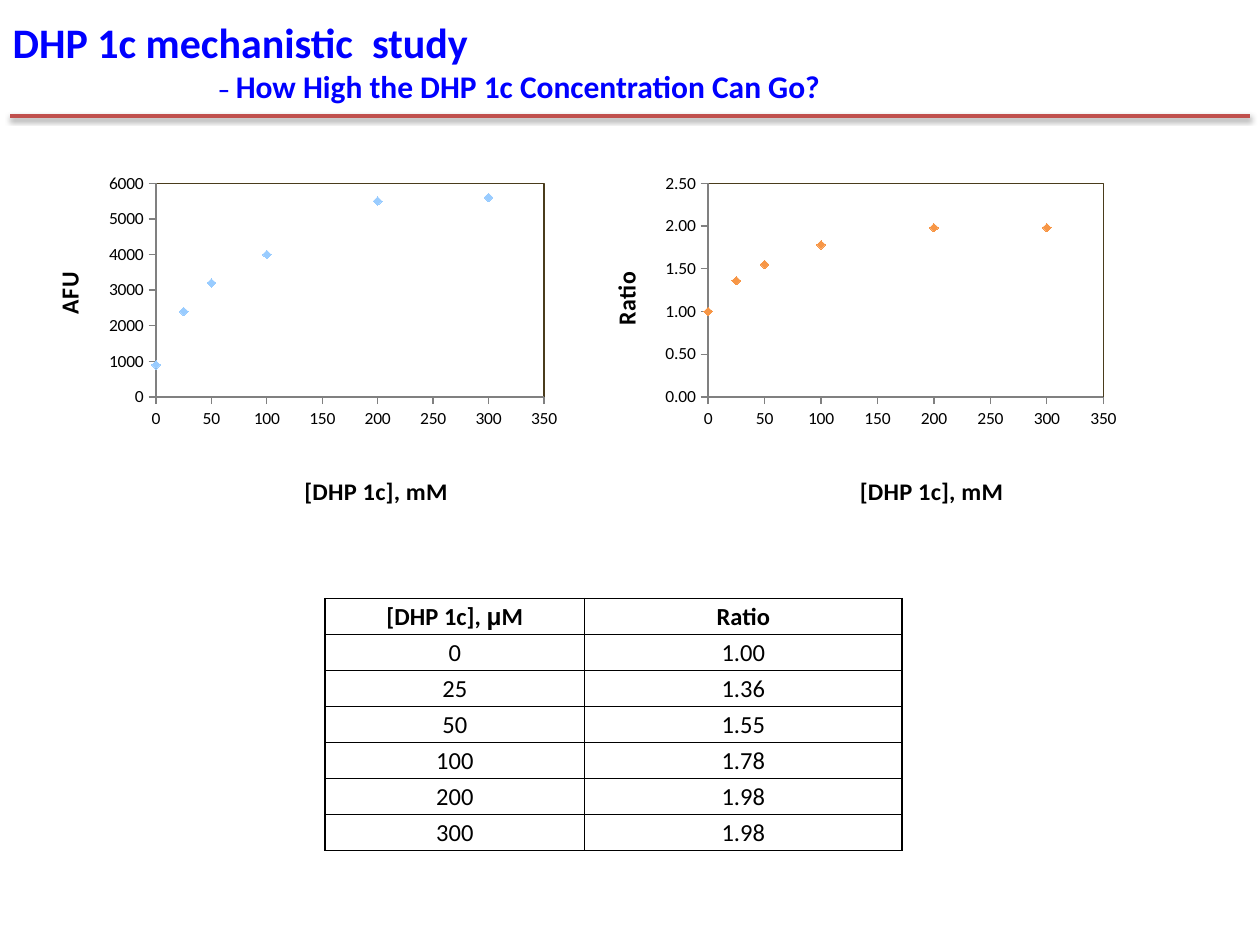
from lxml.etree import SubElement
from pptx import Presentation
from pptx.chart.data import XyChartData
from pptx.dml.color import RGBColor
from pptx.enum.chart import XL_CHART_TYPE, XL_MARKER_STYLE, XL_TICK_MARK
from pptx.enum.shapes import MSO_CONNECTOR
from pptx.enum.text import MSO_ANCHOR, PP_ALIGN
from pptx.oxml import parse_xml
from pptx.oxml.ns import nsdecls, qn
from pptx.util import Inches, Pt

COLORS = {
    "title": "0000FF",
    "rule": "C0504D",
    "text": "000000",
    "axis": "808080",
    "frame": "4A3C1C",
    "fluorescence": "99CCFF",
    "ratio": "F79646",
}
FONT = "Calibri"


def color(name):
    return RGBColor.from_string(COLORS[name])


def set_layout(element, index, **fractions):
    """Place a chart part by fractions of the chart, as child number index."""
    for old_layout in element.findall(qn("c:layout")):
        element.remove(old_layout)
    layout = parse_xml(f"<c:layout {nsdecls('c')}><c:manualLayout/></c:layout>")
    element.insert(index, layout)
    manual = layout[0]
    if "w" in fractions:
        SubElement(manual, qn("c:layoutTarget"), val="inner")
    for side in ("xMode", "yMode"):
        SubElement(manual, qn(f"c:{side}"), val="edge")
    for key, value in fractions.items():
        SubElement(manual, qn(f"c:{key}"), val=str(value))


presentation = Presentation()
presentation.slide_width = Inches(10)
presentation.slide_height = Inches(7.5)
slide = presentation.slides.add_slide(presentation.slide_layouts[5])

# Rule under the heading, with a soft shadow
rule = slide.shapes.add_connector(
    MSO_CONNECTOR.STRAIGHT, Inches(0.08), Inches(0.92), Inches(9.92), Inches(0.92)
)
rule.line.color.rgb = color("rule")
rule.line.width = Pt(2)
rule._element.spPr.append(parse_xml(
    f'<a:effectLst {nsdecls("a")}>'
    '<a:outerShdw blurRad="39370" dist="20320" dir="5400000" rotWithShape="0">'
    '<a:srgbClr val="000000"><a:alpha val="38000"/></a:srgbClr>'
    "</a:outerShdw></a:effectLst>"
))

# Heading
title = slide.shapes.title
title.left, title.top = Inches(0), Inches(0.08)
title.width, title.height = Inches(7.33), Inches(0.81)
frame = title.text_frame
frame.word_wrap = True
frame.vertical_anchor = MSO_ANCHOR.TOP
heading = frame.paragraphs[0]
heading.text = "DHP 1c mechanistic  study"
subheading = frame.add_paragraph()
subheading._p.get_or_add_pPr().set("marL", str(Inches(1.63)))
subheading.add_run().text = "– "
subheading.add_run().text = "How High the DHP 1c Concentration Can Go?"
subheading.runs[0].font.size = Pt(14)
for paragraph, size in ((heading, 24), (subheading, 18)):
    paragraph.alignment = PP_ALIGN.LEFT
    paragraph.font.name = FONT
    paragraph.font.size = Pt(size)
    paragraph.font.bold = True
    paragraph.font.color.rgb = color("title")

# Scatter charts
concentrations = [0, 25, 50, 100, 200, 300]
ratios = [1, 1.36, 1.55, 1.78, 1.98, 1.98]
charts = [
    dict(name="AFU", left=0.25, width=4.26, values=[900, 2400, 3200, 4000, 5500, 5600],
         maximum=6000, step=1000, number_format="0", marker="fluorescence",
         plot=(0.232, 0.723), x_title=0.5, y_title=(0.03, 0.3)),
    dict(name="Ratio", left=4.67, width=4.28, values=ratios,
         maximum=2.5, step=0.5, number_format="0.00", marker="ratio",
         plot=(0.222, 0.733), x_title=0.495, y_title=(0.03, 0.3)),
]
for settings in charts:
    chart_data = XyChartData()
    data_series = chart_data.add_series("Series 1")
    for concentration, value in zip(concentrations, settings["values"]):
        data_series.add_data_point(concentration, value)
    chart = slide.shapes.add_chart(
        XL_CHART_TYPE.XY_SCATTER, Inches(settings["left"]), Inches(1.33),
        Inches(settings["width"]), Inches(2.75), chart_data,
    ).chart
    chart.has_title = False
    chart.has_legend = False
    chart.font.name = FONT
    chart.font.size = Pt(10)
    chart.font.color.rgb = color("text")
    chart.plots[0].vary_by_categories = False

    series = chart.plots[0].series[0]
    series.format.line.fill.background()
    series.marker.style = XL_MARKER_STYLE.DIAMOND
    series.marker.size = 5
    series.marker.format.fill.solid()
    series.marker.format.fill.fore_color.rgb = color(settings["marker"])
    series.marker.format.line.color.rgb = color(settings["marker"])

    for axis, text, maximum, step, number_format, position in (
        (chart.category_axis, "[DHP 1c], mM", 350, 50, "0", (settings["x_title"], 0.9)),
        (chart.value_axis, settings["name"], settings["maximum"], settings["step"],
         settings["number_format"], settings["y_title"]),
    ):
        axis.minimum_scale, axis.maximum_scale = 0, maximum
        axis.major_unit = step
        axis.has_major_gridlines = False
        axis.major_tick_mark = XL_TICK_MARK.OUTSIDE
        axis.minor_tick_mark = XL_TICK_MARK.NONE
        axis.tick_labels.number_format = number_format
        axis.tick_labels.number_format_is_linked = False
        axis.format.line.color.rgb = color("axis")
        paragraph = axis.axis_title.text_frame.paragraphs[0]
        paragraph.text = text
        paragraph.font.name = FONT
        paragraph.font.size = Pt(14)
        paragraph.font.bold = True
        paragraph.font.color.rgb = color("text")
        set_layout(axis.axis_title._element, 1, x=position[0], y=position[1])

    plot_area = chart._chartSpace.chart.plotArea
    plot_left, plot_width = settings["plot"]
    set_layout(plot_area, 0, x=plot_left, y=0.047, w=plot_width, h=0.635)
    plot_area.append(parse_xml(
        f'<c:spPr {nsdecls("c", "a")}><a:noFill/><a:ln w="9525"><a:solidFill>'
        f'<a:srgbClr val="{COLORS["frame"]}"/></a:solidFill></a:ln></c:spPr>'
    ))

# Table of ratios
rows = [("[DHP 1c], μM", "Ratio")]
rows += [(str(x), f"{ratio:.2f}") for x, ratio in zip(concentrations, ratios)]
table = slide.shapes.add_table(
    len(rows), 2, Inches(2.58), Inches(4.75), Inches(4.58), Inches(2)
).table
table.columns[0].width, table.columns[1].width = Inches(2.06), Inches(2.52)
for row_index, row in enumerate(rows):
    table.rows[row_index].height = Inches(2 / len(rows))
    for column_index, text in enumerate(row):
        cell = table.cell(row_index, column_index)
        cell.fill.background()
        cell.vertical_anchor = MSO_ANCHOR.MIDDLE
        cell.margin_left = cell.margin_right = cell.margin_top = Inches(0.01)
        cell.margin_bottom = 0
        paragraph = cell.text_frame.paragraphs[0]
        paragraph.alignment = PP_ALIGN.CENTER
        paragraph.font.name = FONT
        paragraph.font.size = Pt(14)
        paragraph.font.bold = row_index == 0
        paragraph.font.color.rgb = color("text")
        before, mu, after = text.partition("μ")
        for part in filter(None, (before, mu, after)):
            run = paragraph.add_run()
            run.text = part
            if part == "μ":
                run.font.name = "Arial"
        for index, side in enumerate(("lnL", "lnR", "lnT", "lnB")):
            cell._tc.get_or_add_tcPr().insert(index, parse_xml(
                f'<a:{side} {nsdecls("a")} w="12700"><a:solidFill>'
                f'<a:srgbClr val="{COLORS["text"]}"/></a:solidFill></a:{side}>'
            ))

presentation.save("out.pptx")
